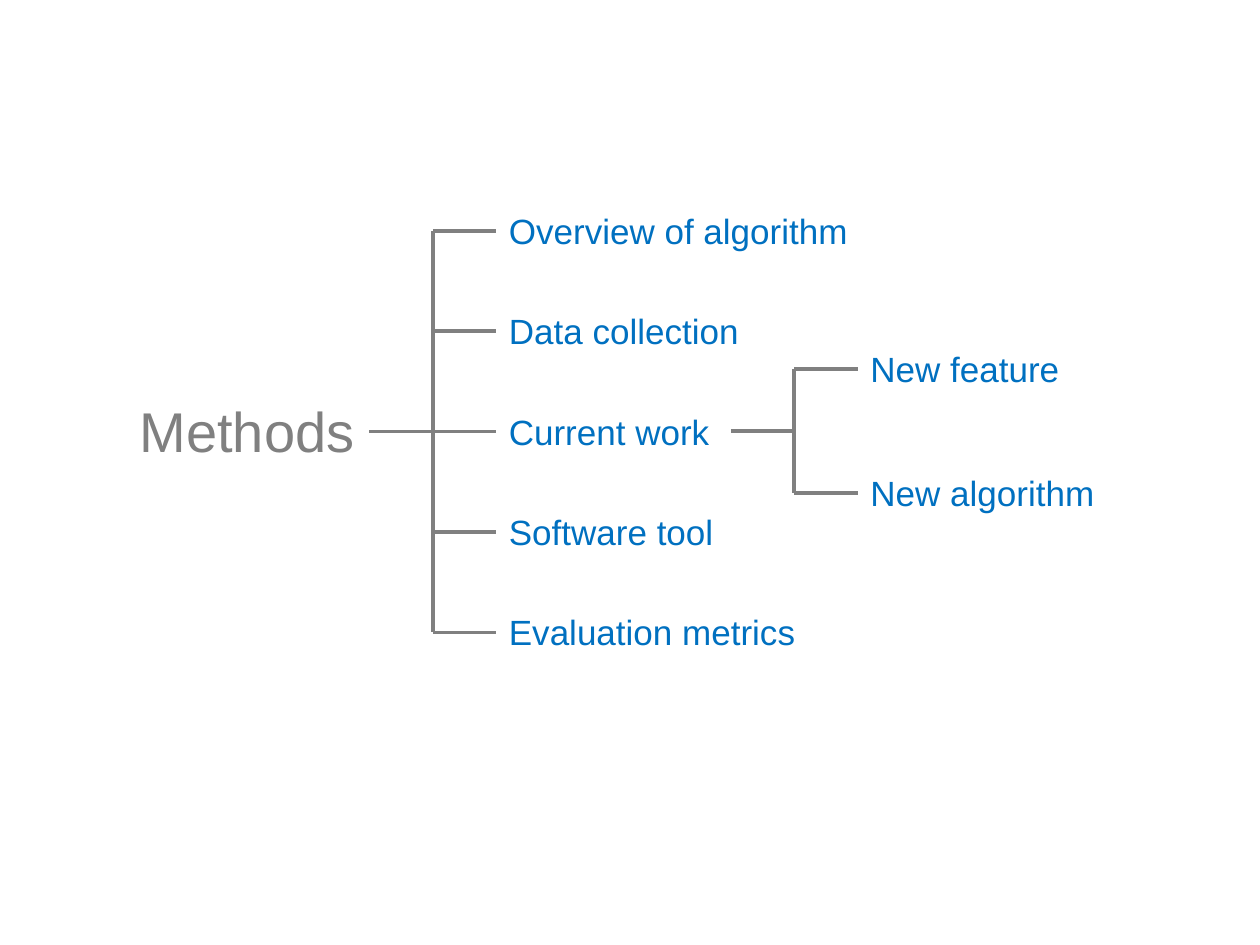
from lxml.etree import SubElement
from pptx import Presentation
from pptx.dml.color import RGBColor
from pptx.enum.text import MSO_AUTO_SIZE
from pptx.oxml.ns import qn
from pptx.util import Inches, Pt

GRAY = RGBColor(0x80, 0x80, 0x80)
BLUE = RGBColor(0x00, 0x70, 0xC0)
FONT = "Arial"
ARM = 0.505  # length of a stem and of each branch
LABEL_HEIGHT = 0.44

METHODS = [
    ("Overview of algorithm", 3.19),
    ("Data collection", 3.19),
    ("Current work", 1.87),
    ("Software tool", 3.19),
    ("Evaluation metrics", 3.19),
]
CURRENT_WORK = [("New feature", 1.87), ("New algorithm", 2.07)]


def add_label(slide, text, left, middle, width, height, size, color):
    """Place one line of text, centred vertically on middle."""
    label = slide.shapes.add_textbox(
        Inches(left), Inches(middle - height / 2), Inches(width), Inches(height))
    frame = label.text_frame
    frame.word_wrap = True
    frame.auto_size = MSO_AUTO_SIZE.SHAPE_TO_FIT_TEXT
    paragraph = frame.paragraphs[0]
    paragraph.text = text
    paragraph.font.name = FONT
    paragraph.font.size = Pt(size)
    paragraph.font.color.rgb = color


def add_line(slide, x1, y1, x2, y2):
    line = slide.shapes.add_connector(
        1, Inches(x1), Inches(y1), Inches(x2), Inches(y2))
    line.line.color.rgb = GRAY
    line.line.width = Pt(2.25)
    SubElement(line._element.spPr, qn("a:effectLst"))


def add_fork(slide, left, top, bottom, branches):
    """Draw a stem, a spine and evenly spaced labelled branches."""
    middle = (top + bottom) / 2
    spine = left + ARM
    tip = spine + ARM
    step = (bottom - top) / (len(branches) - 1)
    add_line(slide, left, middle, spine, middle)
    add_line(slide, spine, top, spine, middle)
    add_line(slide, spine, middle, spine, bottom)
    for row, (text, width) in enumerate(branches):
        y = top + row * step
        add_line(slide, spine, y, tip, y)
        add_label(slide, text, tip, y, width, LABEL_HEIGHT, 20, BLUE)


def main():
    presentation = Presentation()
    presentation.slide_width = Inches(10)
    presentation.slide_height = Inches(7.5)
    slide = presentation.slides.add_slide(presentation.slide_layouts[6])
    add_label(slide, "Methods", 1.01, 3.42, 1.92, 0.64, 32, GRAY)
    add_fork(slide, 2.93, 1.83, 5.02, METHODS)
    add_fork(slide, 5.8, 2.93, 3.91, CURRENT_WORK)
    presentation.save("out.pptx")


if __name__ == "__main__":
    main()
